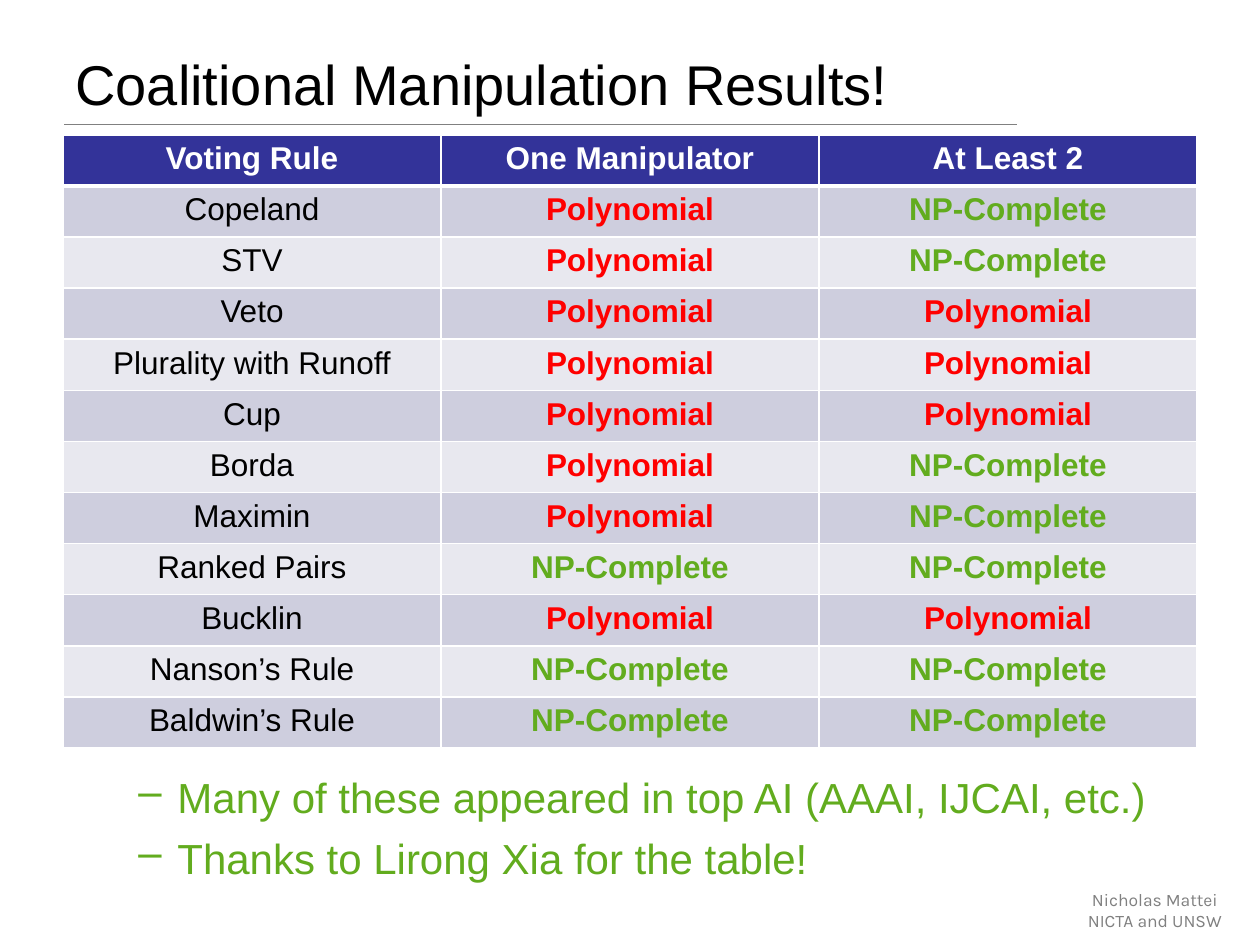
from lxml.etree import SubElement
from pptx import Presentation
from pptx.dml.color import RGBColor
from pptx.enum.shapes import MSO_CONNECTOR
from pptx.enum.text import PP_ALIGN
from pptx.oxml.ns import qn
from pptx.util import Inches, Pt

HUES = {"ink": "000000", "white": "FFFFFF", "grey": "808080", "head": "333399",
        "dark": "CECEDE", "light": "E8E8EF", "hard": "62AC1E", "easy": "FF0000"}
RULES = [("Copeland", "P", "NP"), ("STV", "P", "NP"), ("Veto", "P", "P"),
         ("Plurality with Runoff", "P", "P"), ("Cup", "P", "P"),
         ("Borda", "P", "NP"), ("Maximin", "P", "NP"),
         ("Ranked Pairs", "NP", "NP"), ("Bucklin", "P", "P"),
         ("Nanson’s Rule", "NP", "NP"), ("Baldwin’s Rule", "NP", "NP")]
CLASS = {"P": ("Polynomial", "easy"), "NP": ("NP-Complete", "hard")}


def style(para, size, hue, face="Arial", bold=False):
    font = para.font if not para.runs else para.runs[0].font
    font.size, font.name, font.bold = Pt(size), face, bold
    font.color.rgb = RGBColor.from_string(HUES[hue])


def write(left, top, wide, high, lines, size, hue, face="Arial"):
    box = slide.shapes.add_textbox(Inches(left), Inches(top), Inches(wide), Inches(high))
    frame = box.text_frame
    frame.word_wrap = True
    frame.text = "\n".join(lines)
    for para in frame.paragraphs:
        style(para, size, hue, face)
    return frame


deck = Presentation()
deck.slide_width, deck.slide_height = Inches(10), Inches(7.5)
slide = deck.slides.add_slide(deck.slide_layouts[6])
edge, span = 0.5, 9

# Title and the rule below it
title = write(edge, 0.29, span, 0.79, ["Coalitional Manipulation Results!"], 32, "ink")
title.margin_top = Inches(0.1)
rule = slide.shapes.add_connector(MSO_CONNECTOR.STRAIGHT, Inches(0.51), Inches(0.99),
                                  Inches(8.07), Inches(0.99))
rule.line.color.rgb = RGBColor.from_string(HUES["grey"])
rule.line.width = Pt(0.75)
SubElement(rule._element.spPr, qn("a:effectLst"))

# Footer
footer = write(8.33, 7.01, 1.67, 0.49, ["Nicholas Mattei", "NICTA and UNSW"],
               10, "grey", "Karla")
for para in footer.paragraphs:
    para.alignment = PP_ALIGN.CENTER

# Results table: each cell is a text, its hue and whether it is bold
rows = [[(name, "white", True) for name in ("Voting Rule", "One Manipulator", "At Least 2")]]
for name, *marks in RULES:
    rows.append([(name, "ink", False)] + [(*CLASS[mark], True) for mark in marks])
table = slide.shapes.add_table(len(rows), 3, Inches(edge), Inches(1.07),
                               Inches(span), Inches(4.87)).table
for r, row in enumerate(rows):
    back = "head" if r == 0 else ("light", "dark")[r % 2]
    for c, (text, hue, bold) in enumerate(row):
        cell = table.cell(r, c)
        cell.text = text
        para = cell.text_frame.paragraphs[0]
        para.alignment = PP_ALIGN.CENTER
        style(para, 18, hue, bold=bold)
        props = cell._tc.get_or_add_tcPr()
        for side in "LRTB":
            thick = 3 if (r, side) in ((0, "B"), (1, "T")) else 1
            line = SubElement(props, qn("a:ln" + side), w=str(Pt(thick)))
            SubElement(SubElement(line, qn("a:solidFill")), qn("a:srgbClr"),
                       val=HUES["white"])
        cell.fill.solid()
        cell.fill.fore_color.rgb = RGBColor.from_string(HUES[back])

# Remarks with dash bullets
notes = write(edge, 6.03, span, 0.94,
              ["Many of these appeared in top AI (AAAI, IJCAI, etc.)",
               "Thanks to Lirong Xia for the table!"], 24, "hard")
notes.margin_top = Inches(0.09)
for k, para in enumerate(notes.paragraphs):
    para.level = 1
    para.space_before = Pt(6 * k)
    props = para._p.get_or_add_pPr()
    props.set("marL", str(Inches(0.81)))
    props.set("indent", str(Inches(-0.31)))
    SubElement(props, qn("a:buChar"), char="–")

deck.save("out.pptx")
